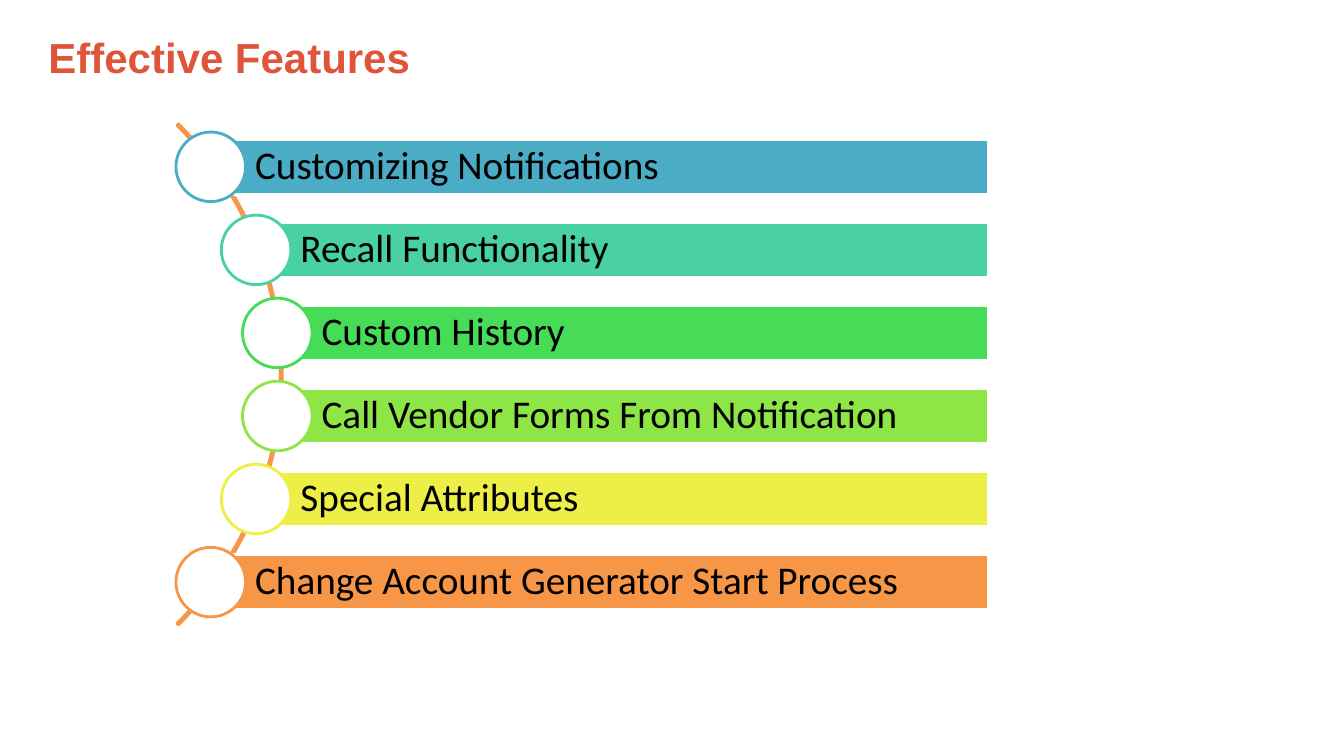
from pptx import Presentation
from pptx.dml.color import RGBColor
from pptx.enum.shapes import MSO_SHAPE
from pptx.enum.text import MSO_ANCHOR, PP_ALIGN
from pptx.util import Inches, Pt

RECTANGLE, OVAL, BLOCK_ARC = MSO_SHAPE.RECTANGLE, MSO_SHAPE.OVAL, MSO_SHAPE.BLOCK_ARC
MIDDLE, LEFT = MSO_ANCHOR.MIDDLE, PP_ALIGN.LEFT

# Content: label, colour, left edge of the bar
TITLE = "Effective Features"
FEATURES = [
    ("Customizing Notifications", "4BACC6", 2.09),
    ("Recall Functionality", "49D1A3", 2.54),
    ("Custom History", "47DC57", 2.75),
    ("Call Vendor Forms From Notification", "8DE646", 2.75),
    ("Special Attributes", "EEEF46", 2.54),
    ("Change Account Generator Start Process", "F79646", 2.09),
]
WHITE, BLACK, RED, ORANGE = "FFFFFF", "000000", "E05439", "F79646"

# Layout in inches
BAR_RIGHT, BAR_HEIGHT = 9.8, 0.55
FIRST_TOP, LAST_TOP = 1.38, 5.5
CIRCLE_SIZE = 0.69
ARC_LEFT, ARC_TOP, ARC_SIZE = -4.23, 0.2, 7.03


def color(hex_string):
    return RGBColor.from_string(hex_string)


def add_part(slide, kind, left, top, width, height, fill, line):
    shape = slide.shapes.add_shape(
        kind, Inches(left), Inches(top), Inches(width), Inches(height))
    shape.shadow.inherit = False
    if fill:
        shape.fill.solid()
        shape.fill.fore_color.rgb = color(fill)
    else:
        shape.fill.background()
    shape.line.color.rgb = color(line)
    shape.line.width = Pt(2)
    return shape


def write(shape, text, font_name, size, text_color, bold=False):
    frame = shape.text_frame
    frame.word_wrap = True
    frame.vertical_anchor = MIDDLE
    paragraph = frame.paragraphs[0]
    paragraph.alignment = LEFT
    run = paragraph.add_run()
    run.text = text
    run.font.name = font_name
    run.font.size = Pt(size)
    run.font.bold = bold
    run.font.color.rgb = color(text_color)
    return frame


def main():
    presentation = Presentation()
    presentation.slide_width = Inches(13.33)
    presentation.slide_height = Inches(7.5)
    slide = presentation.slides.add_slide(presentation.slide_layouts[5])

    # Title
    title = slide.shapes.title
    title.left, title.top = Inches(0.38), Inches(0)
    title.width, title.height = Inches(9.71), Inches(1.13)
    write(title, TITLE, "Arial", 30, RED, bold=True)

    # Arc behind the circles, from 315 to 45 degrees
    arc = add_part(slide, BLOCK_ARC, ARC_LEFT, ARC_TOP, ARC_SIZE, ARC_SIZE, None, ORANGE)
    for index, value in enumerate((189, 27, 0.003)):
        arc.adjustments[index] = value

    # Bars, each with a circle centred on its left edge
    pitch = (LAST_TOP - FIRST_TOP) / (len(FEATURES) - 1)
    for index, (label, accent, left) in enumerate(FEATURES):
        top = FIRST_TOP + index * pitch
        bar = add_part(slide, RECTANGLE, left, top, BAR_RIGHT - left, BAR_HEIGHT, accent, WHITE)
        frame = write(bar, label, "Calibri", 28, BLACK)
        frame.margin_left = Inches(0.44)
        frame.margin_top = frame.margin_right = frame.margin_bottom = Inches(0.08)
        frame.paragraphs[0].line_spacing = 0.9
        add_part(slide, OVAL, left - CIRCLE_SIZE / 2, top + (BAR_HEIGHT - CIRCLE_SIZE) / 2,
                 CIRCLE_SIZE, CIRCLE_SIZE, WHITE, accent)

    presentation.save("out.pptx")


if __name__ == "__main__":
    main()
